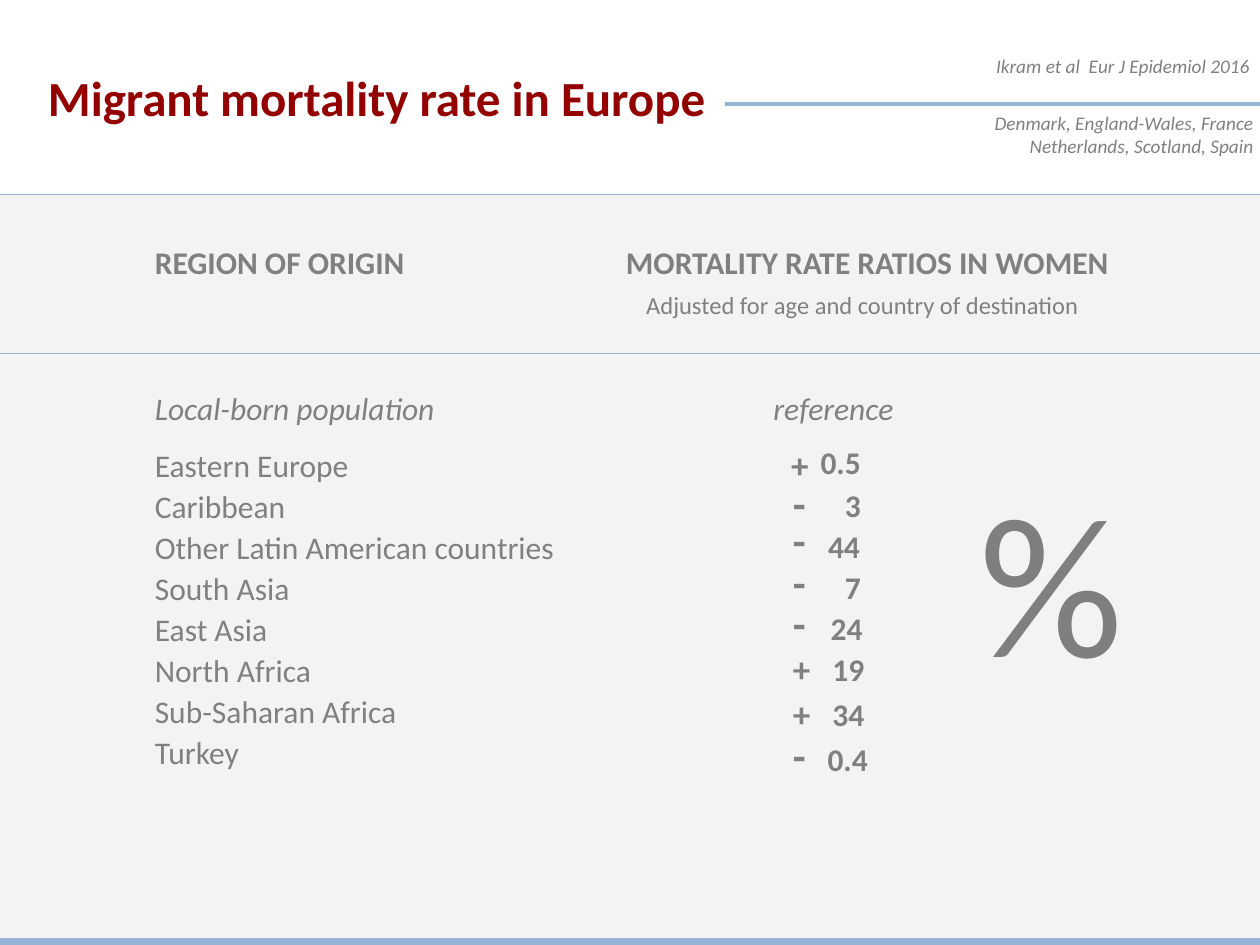
from lxml import etree
from pptx import Presentation
from pptx import util as u
from pptx.dml.color import RGBColor
from pptx.enum import shapes, text
from pptx.oxml.ns import qn

COLORS = {"title": "920000", "body": "808080", "percent": "7F7F7F",
          "panel": "F2F2F2", "rule": "95B3D7"}
FONT = "Calibri"
SLIDE_WIDTH, SLIDE_HEIGHT = 720, 540
PANEL_TOP = 111.3
LABEL_LEFT, LABEL_TOP, ROW_PITCH = 81.4, 251.2, 23.45
ROW_HEIGHT, VALUE_WIDTH = 29, 42
SIGN_SIZES = {"+": 20, "-": 24}

# region, sign, sign left, sign top, value, value right edge, value top
ROWS = [
    ("Eastern Europe", "+", 445, 249.8, "0.5", 499, 249.8),
    ("Caribbean", "-", 446, 269.3, "3", 499, 274.3),
    ("Other Latin American countries", "-", 446, 290.2, "44", 498.5, 297.4),
    ("South Asia", "-", 446, 314.6, "7", 499, 321.1),
    ("East Asia", "-", 446, 337.7, "24", 500, 344.2),
    ("North Africa", "+", 446, 366.5, "19", 501, 367.9),
    ("Sub-Saharan Africa", "+", 446, 392.4, "34", 501, 393.8),
    ("Turkey", "-", 446, 413.3, "0.4", 503, 419.3),
]


def rgb(name):
    return RGBColor.from_string(COLORS[name])


def place(shape, left, top, width, height):
    shape.left, shape.top = u.Pt(left), u.Pt(top)
    shape.width, shape.height = u.Pt(width), u.Pt(height)


def format_text(frame, size, color="body", bold=False, italic=False,
                align=text.PP_ALIGN.LEFT):
    for para in frame.paragraphs:
        para.alignment = align
        for span in para.runs:
            span.font.name, span.font.size = FONT, u.Pt(size)
            span.font.bold, span.font.italic = bold, italic
            span.font.color.rgb = rgb(color)


def add_title(page, words):
    title = page.shapes.title
    place(title, 20.2, 15.1, 398, 80)
    frame = title.text_frame
    frame.text = words
    frame.auto_size = text.MSO_AUTO_SIZE.NONE
    frame.vertical_anchor = text.MSO_ANCHOR.MIDDLE
    format_text(frame, 28, "title", bold=True)


def add_text(page, words, left, top, width, height, size=18, wrap=False, **style):
    box = page.shapes.add_textbox(u.Pt(left), u.Pt(top), u.Pt(width), u.Pt(height))
    box.text_frame.word_wrap = wrap
    box.text_frame.text = words
    format_text(box.text_frame, size, **style)


def add_panel(page, top):
    panel = page.shapes.add_shape(shapes.MSO_SHAPE.RECTANGLE, 0, u.Pt(top),
                                  u.Pt(SLIDE_WIDTH), u.Pt(SLIDE_HEIGHT - top))
    panel.shadow.inherit = False
    panel.fill.solid()
    panel.fill.fore_color.rgb = rgb("panel")
    panel.line.fill.background()
    color = panel._element.spPr.find(".//" + qn("a:srgbClr"))
    etree.SubElement(color, qn("a:alpha")).set("val", "88000")


def add_rule(page, top, weight, left=0):
    rule = page.shapes.add_connector(shapes.MSO_CONNECTOR.STRAIGHT, u.Pt(left),
                                     u.Pt(top), u.Pt(SLIDE_WIDTH), u.Pt(top))
    rule.line.color.rgb = rgb("rule")
    rule.line.width = u.Pt(weight)
    etree.SubElement(rule._element.spPr, qn("a:effectLst"))


def add_row(page, index, row):
    region, sign, sign_left, sign_top, value, value_right, value_top = row
    # Label width: room for the letters plus both insets and a margin
    add_text(page, region, LABEL_LEFT, LABEL_TOP + index * ROW_PITCH,
             7.7 * len(region) + 24, ROW_HEIGHT)
    add_text(page, sign, sign_left, sign_top, 28, 34, SIGN_SIZES[sign], bold=True)
    add_text(page, value, value_right - VALUE_WIDTH, value_top, VALUE_WIDTH,
             ROW_HEIGHT, wrap=True, bold=True, align=text.PP_ALIGN.RIGHT)


def main():
    deck = Presentation()
    deck.slide_width, deck.slide_height = u.Pt(SLIDE_WIDTH), u.Pt(SLIDE_HEIGHT)
    page = deck.slides.add_slide(deck.slide_layouts[5])

    # Background panel and rules
    add_panel(page, PANEL_TOP)
    add_rule(page, PANEL_TOP, 0.75)
    add_rule(page, 202.2, 0.75)
    add_rule(page, 59.6, 2.25, left=414)
    add_rule(page, 538.8, 6)

    # Title and source
    add_title(page, "Migrant mortality rate in Europe")
    source = {"size": 11, "wrap": True, "italic": True, "align": text.PP_ALIGN.RIGHT}
    add_text(page, "Ikram et al  Eur J Epidemiol 2016", 405.4, 27.4, 316, 21, **source)
    add_text(page, "Denmark, England-Wales, France\nNetherlands, Scotland, Spain",
             515.5, 60.2, 208, 34, **source)

    # Column headings
    add_text(page, "REGION OF ORIGIN", LABEL_LEFT, 135.4, 160, ROW_HEIGHT, bold=True)
    add_text(page, "MORTALITY RATE RATIOS IN WOMEN", 350.6, 135.4, 295, ROW_HEIGHT,
             bold=True)
    add_text(page, "Adjusted for age and country of destination",
             362.2, 162.4, 266, 24, 14)

    # Reference row, then one row per region
    add_text(page, "Local-born population", LABEL_LEFT, 218.9, 180, ROW_HEIGHT,
             italic=True)
    add_text(page, "reference", 434.9, 218.9, 87, ROW_HEIGHT, italic=True)
    for index, row in enumerate(ROWS):
        add_row(page, index, row)

    # Unit of the values
    add_text(page, "%", 552.6, 257, 100, 147, 115, color="percent")

    deck.save("out.pptx")


if __name__ == "__main__":
    main()
